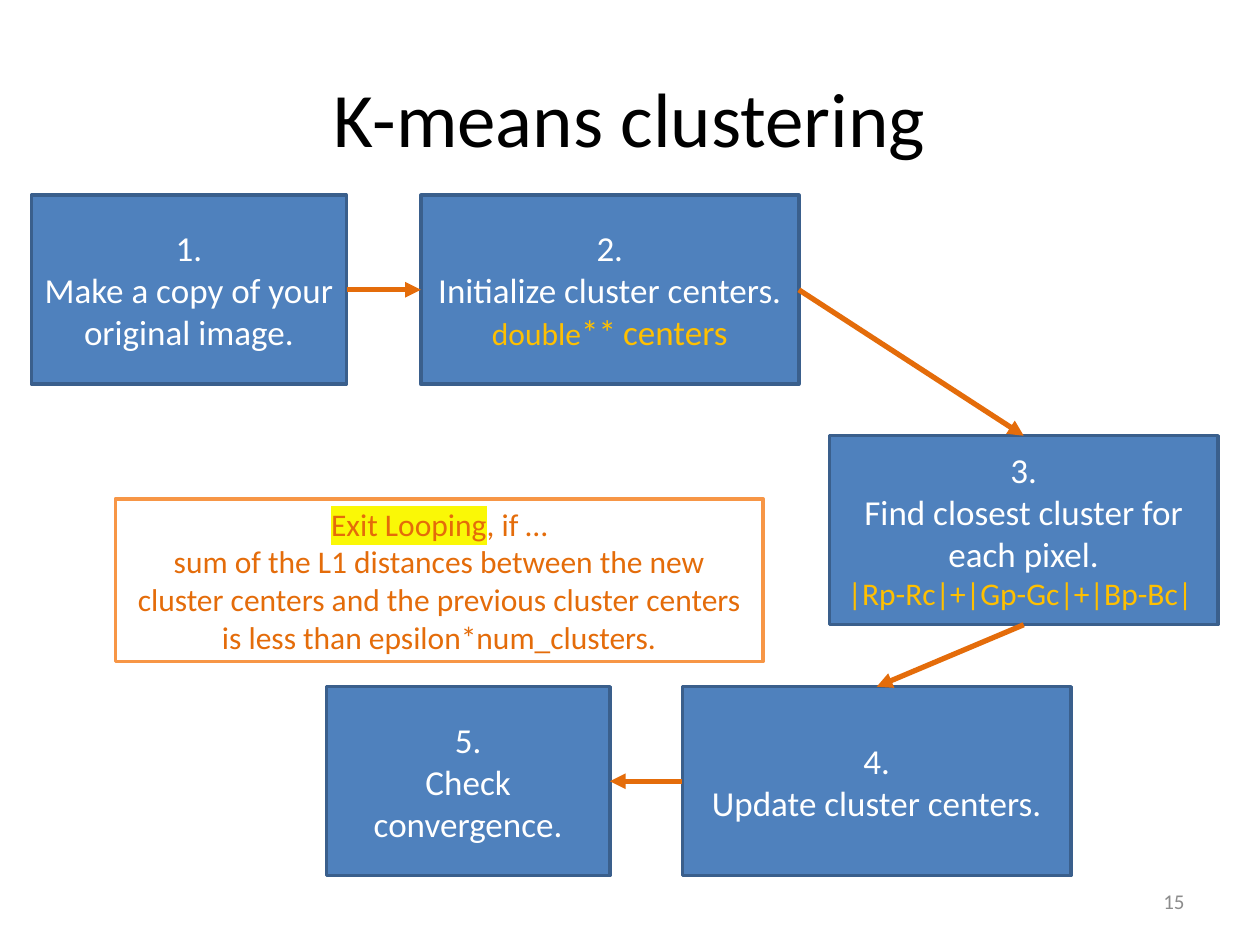
from dataclasses import dataclass

from lxml import etree
from pptx import Presentation
from pptx.dml.color import RGBColor
from pptx.enum.shapes import MSO_CONNECTOR, MSO_SHAPE
from pptx.enum.text import MSO_ANCHOR, PP_ALIGN
from pptx.oxml.ns import qn
from pptx.shapes.autoshape import Shape
from pptx.slide import Slide
from pptx.util import Pt

RECTANGLE = MSO_SHAPE.RECTANGLE
STRAIGHT = MSO_CONNECTOR.STRAIGHT
MIDDLE = MSO_ANCHOR.MIDDLE
CENTER, RIGHT_ALIGNED = PP_ALIGN.CENTER, PP_ALIGN.RIGHT
TOP, LEFT, BOTTOM, RIGHT = range(4)  # connection sites of a rectangle
BLANK_LAYOUT = 6


@dataclass(frozen=True)
class Theme:
    font: str = "Calibri"
    title_size: float = 44
    step_size: float = 20
    detail_size: float = 18
    number_size: float = 12
    black: str = "000000"
    white: str = "FFFFFF"
    gray: str = "8C8C8C"
    step_fill: str = "4F81BD"
    step_border: str = "3A5F8C"
    code: str = "FFC000"
    accent: str = "E46C0A"
    exit_border: str = "F79646"
    highlight: str = "FAF806"
    border_width: float = 2
    arrow_width: float = 3


THEME = Theme()


@dataclass(frozen=True)
class Span:
    """A stretch of text; a size here overrides the paragraph's."""
    text: str
    size: float | None = None
    highlight: str | None = None


@dataclass(frozen=True)
class Line:
    spans: tuple[Span, ...]
    size: float = THEME.step_size
    color: str = THEME.white


@dataclass(frozen=True)
class Box:
    left: float
    top: float
    width: float
    height: float
    lines: tuple[Line, ...]
    fill: str | None = None
    border: str | None = None


@dataclass(frozen=True)
class Arrow:
    source: int
    source_site: int
    target: int
    target_site: int


def plain(text: str, size: float = THEME.step_size, color: str = THEME.white) -> Line:
    return Line((Span(text),), size, color)


def step(number: int, left: float, top: float, width: float, *lines: Line) -> Box:
    return Box(left, top, width, 108, (plain(f"{number}."), *lines),
               THEME.step_fill, THEME.step_border)


TITLE = Box(36, 21.6, 648, 90,
            (plain("K-means clustering", THEME.title_size, THEME.black),))
PAGE_NUMBER = Box(516, 500.5, 168, 28.75,
                  (plain("15", THEME.number_size, THEME.gray),))

STEPS = (
    step(1, 18, 111.6, 180, plain("Make a copy of your original image.")),
    step(2, 240.5, 111.6, 216,
         plain("Initialize cluster centers."),
         Line((Span("double", THEME.detail_size), Span("**"),
               Span(" ", THEME.detail_size), Span("centers")), color=THEME.code)),
    step(3, 474, 249, 222,
         plain("Find closest cluster for each pixel."),
         plain("|Rp-Rc|+|Gp-Gc|+|Bp-Bc| ", THEME.detail_size, THEME.code)),
    step(4, 390, 392.4, 222, plain("Update cluster centers.")),
    step(5, 186.5, 392.4, 162, plain("Check convergence.")),
)

ARROWS = (
    Arrow(1, RIGHT, 2, LEFT),
    Arrow(2, RIGHT, 3, TOP),
    Arrow(3, BOTTOM, 4, TOP),
    Arrow(4, LEFT, 5, RIGHT),
)

EXIT_RULE = Box(66, 285, 370, 93, (
    Line((Span("Exit Looping", highlight=THEME.highlight), Span(", if …")),
         THEME.detail_size, THEME.accent),
    plain("sum of the L1 distances between the new cluster centers and the previous "
          "cluster centers is less than epsilon*num_clusters.",
          THEME.detail_size, THEME.accent),
), border=THEME.exit_border)


def write_lines(shape: Shape, lines: tuple[Line, ...], alignment: PP_ALIGN) -> None:
    frame = shape.text_frame
    frame.word_wrap = True
    frame.vertical_anchor = MIDDLE
    for index, line in enumerate(lines):
        paragraph = frame.add_paragraph() if index else frame.paragraphs[0]
        paragraph.alignment = alignment
        paragraph.font.name = THEME.font
        paragraph.font.size = Pt(line.size)
        paragraph.font.color.rgb = RGBColor.from_string(line.color)
        for span in line.spans:
            run = paragraph.add_run()
            run.text = span.text
            if span.size:
                run.font.size = Pt(span.size)
            if span.highlight:
                marker = etree.SubElement(run.font._element, qn("a:highlight"))
                etree.SubElement(marker, qn("a:srgbClr"), val=span.highlight)


def add_text(slide: Slide, box: Box, alignment: PP_ALIGN = CENTER) -> None:
    frame = (Pt(box.left), Pt(box.top), Pt(box.width), Pt(box.height))
    write_lines(slide.shapes.add_textbox(*frame), box.lines, alignment)


def add_box(slide: Slide, box: Box) -> Shape:
    shape = slide.shapes.add_shape(
        RECTANGLE, Pt(box.left), Pt(box.top), Pt(box.width), Pt(box.height))
    shape.shadow.inherit = False
    if box.fill:
        shape.fill.solid()
        shape.fill.fore_color.rgb = RGBColor.from_string(box.fill)
    else:
        shape.fill.background()
    shape.line.color.rgb = RGBColor.from_string(box.border)
    shape.line.width = Pt(THEME.border_width)
    write_lines(shape, box.lines, CENTER)
    return shape


def add_arrow(slide: Slide, arrow: Arrow, steps: list[Shape]) -> None:
    connector = slide.shapes.add_connector(STRAIGHT, Pt(0), Pt(0), Pt(0), Pt(0))
    connector.begin_connect(steps[arrow.source - 1], arrow.source_site)
    connector.end_connect(steps[arrow.target - 1], arrow.target_site)
    connector.line.color.rgb = RGBColor.from_string(THEME.accent)
    connector.line.width = Pt(THEME.arrow_width)
    properties = connector._element.spPr
    etree.SubElement(properties.find(qn("a:ln")), qn("a:tailEnd"), type="triangle")
    etree.SubElement(properties, qn("a:effectLst"))


def main() -> None:
    presentation = Presentation()
    presentation.slide_width, presentation.slide_height = Pt(720), Pt(540)
    slide = presentation.slides.add_slide(presentation.slide_layouts[BLANK_LAYOUT])
    add_text(slide, TITLE)
    add_text(slide, PAGE_NUMBER, RIGHT_ALIGNED)
    steps = [add_box(slide, box) for box in STEPS]
    for arrow in ARROWS:
        add_arrow(slide, arrow, steps)
    add_box(slide, EXIT_RULE)
    presentation.save("out.pptx")


if __name__ == "__main__":
    main()
